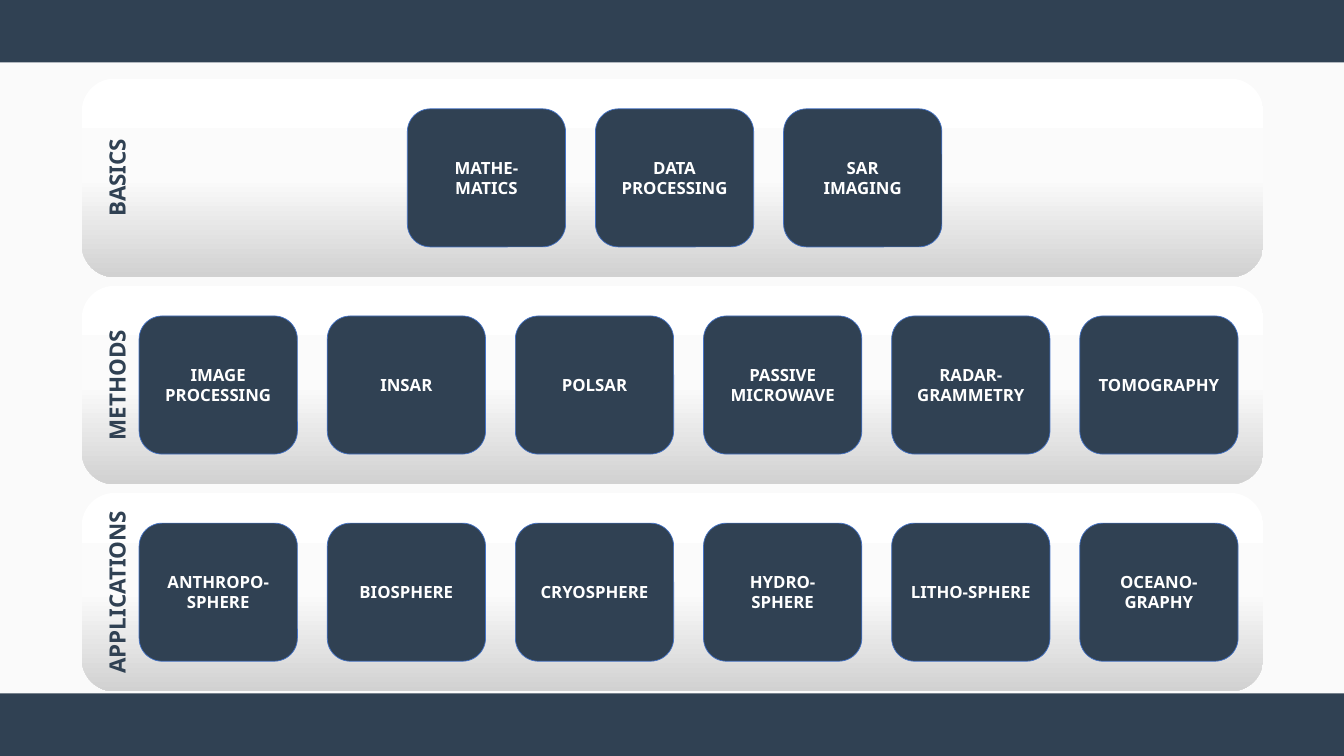
"""Build a slide of SAR course topics in three rows: basics, methods and applications."""
from copy import deepcopy

from pptx import Presentation
from pptx.dml.color import RGBColor
from pptx.enum.shapes import MSO_SHAPE
from pptx.enum.text import MSO_ANCHOR, MSO_AUTO_SIZE, PP_ALIGN
from pptx.oxml.ns import qn
from pptx.util import Inches, Pt

RECT, ROUNDED = MSO_SHAPE.RECTANGLE, MSO_SHAPE.ROUNDED_RECTANGLE
MIDDLE, CENTER = MSO_ANCHOR.MIDDLE, PP_ALIGN.CENTER
GROW = MSO_AUTO_SIZE.SHAPE_TO_FIT_TEXT

NAVY = RGBColor(0x30, 0x41, 0x53)
BLUE = RGBColor(0x44, 0x72, 0xC4)
WHITE = RGBColor(0xFF, 0xFF, 0xFF)
PAPER = RGBColor(0xFA, 0xFA, 0xFA)
PANEL_STOPS = [(0, WHITE), (0.5, RGBColor(0xFB, 0xFB, 0xFB)),
               (1, RGBColor(0xD1, 0xD1, 0xD1))]

SLIDE_W, SLIDE_H, BANNER_H = 13.33, 7.5, 0.62
PANEL_X, PANEL_Y, PANEL_W, PANEL_H = 0.81, 0.78, 11.72, 1.97
ROW_PITCH = 2.055
TILE_W, TILE_H, TILE_PITCH = 1.57, 1.37, 1.866
LABEL_W, LABEL_H, LABEL_CENTER = 1.94, 0.37, 1.16

ROWS = [
    ("BASICS", 4.04, ["MATHE-MATICS", "DATA\nPROCESSING", "SAR\nIMAGING"]),
    ("METHODS", 1.38, ["IMAGE\nPROCESSING", "INSAR", "POLSAR", "PASSIVE MICROWAVE",
                       "RADAR-\nGRAMMETRY", "TOMOGRAPHY"]),
    ("APPLICATIONS", 1.38, ["ANTHROPO-SPHERE", "BIOSPHERE", "CRYOSPHERE",
                            "HYDRO-SPHERE", "LITHO-SPHERE", "OCEANO-GRAPHY"]),
]


def add_block(kind, x, y, w, h):
    s = slide.shapes.add_shape(kind, Inches(x), Inches(y), Inches(w), Inches(h))
    s.shadow.inherit = False
    s.fill.solid()
    s.fill.fore_color.rgb = NAVY
    s.line.fill.background()
    return s


def write(tf, text, size, color):
    tf.word_wrap = True
    for i, line in enumerate(text.split("\n")):
        p = tf.add_paragraph() if i else tf.paragraphs[0]
        p.alignment = CENTER
        r = p.add_run()
        r.text = line
        r.font.name = "Noto Sans"
        r.font.size = Pt(size)
        r.font.bold = True
        r.font.color.rgb = color


prs = Presentation()
prs.slide_width, prs.slide_height = Inches(SLIDE_W), Inches(SLIDE_H)
slide = prs.slides.add_slide(prs.slide_layouts[6])
slide.background.fill.solid()
slide.background.fill.fore_color.rgb = PAPER

for y in (0, SLIDE_H - BANNER_H):
    add_block(RECT, 0, y, SLIDE_W, BANNER_H)

for row, (label, first_x, topics) in enumerate(ROWS):
    top = PANEL_Y + row * ROW_PITCH
    middle = top + PANEL_H / 2

    panel = add_block(ROUNDED, PANEL_X, top, PANEL_W, PANEL_H)
    panel.fill.gradient()
    panel.fill.gradient_angle = 270
    stops = panel.fill._xPr.find(qn("a:gradFill")).find(qn("a:gsLst"))
    stops.append(deepcopy(stops[0]))
    for stop, (position, color) in zip(panel.fill.gradient_stops, PANEL_STOPS):
        stop.position = position
        stop.color.rgb = color

    tb = slide.shapes.add_textbox(
        Inches(LABEL_CENTER - LABEL_W / 2), Inches(middle - LABEL_H / 2),
        Inches(LABEL_W), Inches(LABEL_H))
    tb.rotation = 270
    tb.text_frame.auto_size = GROW
    write(tb.text_frame, label, 16, NAVY)

    for column, topic in enumerate(topics):
        tile = add_block(ROUNDED, first_x + column * TILE_PITCH,
                         middle - TILE_H / 2, TILE_W, TILE_H)
        tile.line.color.rgb = BLUE
        tile.line.width = Pt(0.5)
        tile.text_frame.vertical_anchor = MIDDLE
        write(tile.text_frame, topic, 12, WHITE)

prs.save("out.pptx")
